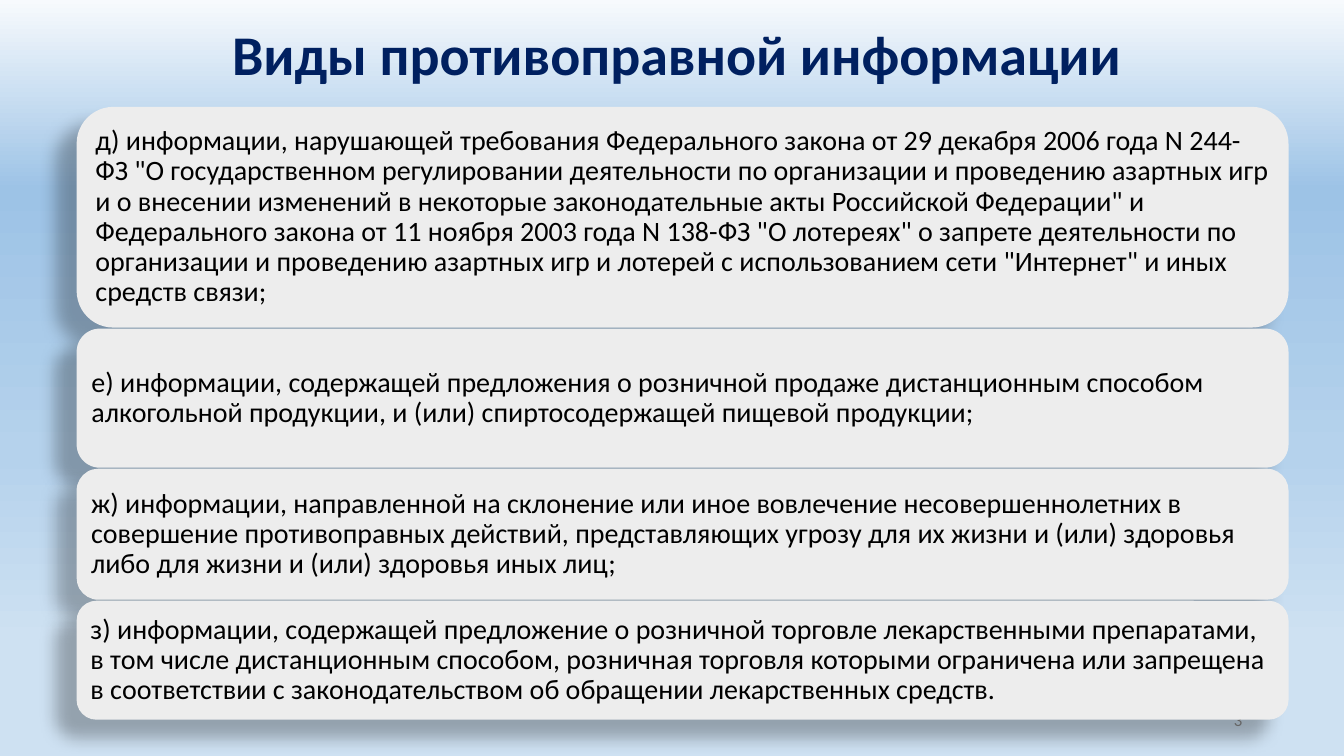
from lxml.etree import SubElement
from pptx import Presentation
from pptx.dml.color import RGBColor
from pptx.enum.shapes import MSO_SHAPE
from pptx.enum.text import MSO_ANCHOR, PP_ALIGN
from pptx.oxml.ns import qn
from pptx.util import Inches, Pt

COLORS = {
    "title": "002060",
    "number": "8C8C8C",
    "card": "EDEDED",
    "text": "000000",
    "shadow": "000000",
}
SKY_STOPS = [(0, "F7FAFD"), (25, "9DC3E6"), (60, "B5D2EC"), (85, "CEE1F2")]

# Row height in inches and wording of each card
CARDS = [
    (2.2, 'д) информации, нарушающей требования Федерального закона от 29 декабря 2006 года N 244-ФЗ '
          '"О государственном регулировании деятельности по организации и проведению азартных игр '
          'и о внесении изменений в некоторые законодательные акты Российской Федерации" и Федерального '
          'закона от 11 ноября 2003 года N 138-ФЗ "О лотереях" о запрете деятельности по организации '
          'и проведению азартных игр и лотерей с использованием сети "Интернет" и иных средств связи;'),
    (1.39, 'е) информации, содержащей предложения о розничной продаже дистанционным способом '
           'алкогольной продукции, и (или) спиртосодержащей пищевой продукции;'),
    (1.31, 'ж) информации, направленной на склонение или иное вовлечение несовершеннолетних '
           'в совершение противоправных действий, представляющих угрозу для их жизни и (или) здоровья '
           'либо для жизни и (или) здоровья иных лиц;'),
    (1.19, 'з) информации, содержащей предложение о розничной торговле лекарственными препаратами, '
           'в том числе дистанционным способом, розничная торговля которыми ограничена или запрещена '
           'в соответствии с законодательством об обращении лекарственных средств.'),
]
CARD_LEFT, CARD_WIDTH, FIRST_TOP, ROW_GAP = 0.76, 12.02, 1.06, 0.01


def write_text(shape, text, size, color, alignment, bold=False):
    frame = shape.text_frame
    frame.word_wrap = True
    frame.vertical_anchor = MSO_ANCHOR.MIDDLE
    paragraph = frame.paragraphs[0]
    paragraph.text = text
    paragraph.alignment = alignment
    paragraph.line_spacing = 0.9
    paragraph.font.name = "Calibri"
    paragraph.font.size = Pt(size)
    paragraph.font.bold = bold
    paragraph.font.color.rgb = RGBColor.from_string(COLORS[color])


def add_soft_shadow(shape):
    """Cast a blurred shadow to the lower left of the shape."""
    shape.shadow.inherit = False
    effects = shape._element.spPr.find(qn("a:effectLst"))
    shadow = SubElement(effects, qn("a:outerShdw"), blurRad=str(Pt(11.8)), dist=str(Pt(19.7)),
                        dir=str(141 * 60000), algn="ctr", rotWithShape="0")
    color = SubElement(shadow, qn("a:srgbClr"), val=COLORS["shadow"])
    SubElement(color, qn("a:alpha"), val="28000")


presentation = Presentation()
presentation.slide_width = Inches(13.33)
presentation.slide_height = Inches(7.5)
slide = presentation.slides.add_slide(presentation.slide_layouts[6])

# Background
background_fill = slide.background.fill
background_fill.gradient()
background_fill.gradient_angle = 270
stop_list = next(slide._element.iter(qn("a:gsLst")))
for stop in list(stop_list):
    stop_list.remove(stop)
for position, color in SKY_STOPS:
    stop = SubElement(stop_list, qn("a:gs"), pos=str(position * 1000))
    SubElement(stop, qn("a:srgbClr"), val=color)

# Title and slide number
title = slide.shapes.add_textbox(Inches(0.96), Inches(0.16), Inches(11.5), Inches(0.81))
write_text(title, "Виды противоправной информации", 40, "title", PP_ALIGN.CENTER, bold=True)
number = slide.shapes.add_textbox(Inches(9.42), Inches(6.95), Inches(3), Inches(0.4))
write_text(number, "3", 12, "number", PP_ALIGN.RIGHT)

# Stacked cards
top = FIRST_TOP
for row_height, text in CARDS:
    card = slide.shapes.add_shape(MSO_SHAPE.ROUNDED_RECTANGLE, Inches(CARD_LEFT), Inches(top),
                                  Inches(CARD_WIDTH), Inches(row_height - ROW_GAP))
    card.fill.solid()
    card.fill.fore_color.rgb = RGBColor.from_string(COLORS["card"])
    card.line.fill.background()
    add_soft_shadow(card)
    frame = card.text_frame
    frame.margin_left = frame.margin_right = frame.margin_top = frame.margin_bottom = Inches(0.08)
    write_text(card, text, 20, "text", PP_ALIGN.LEFT)
    top += row_height

presentation.save("out.pptx")
